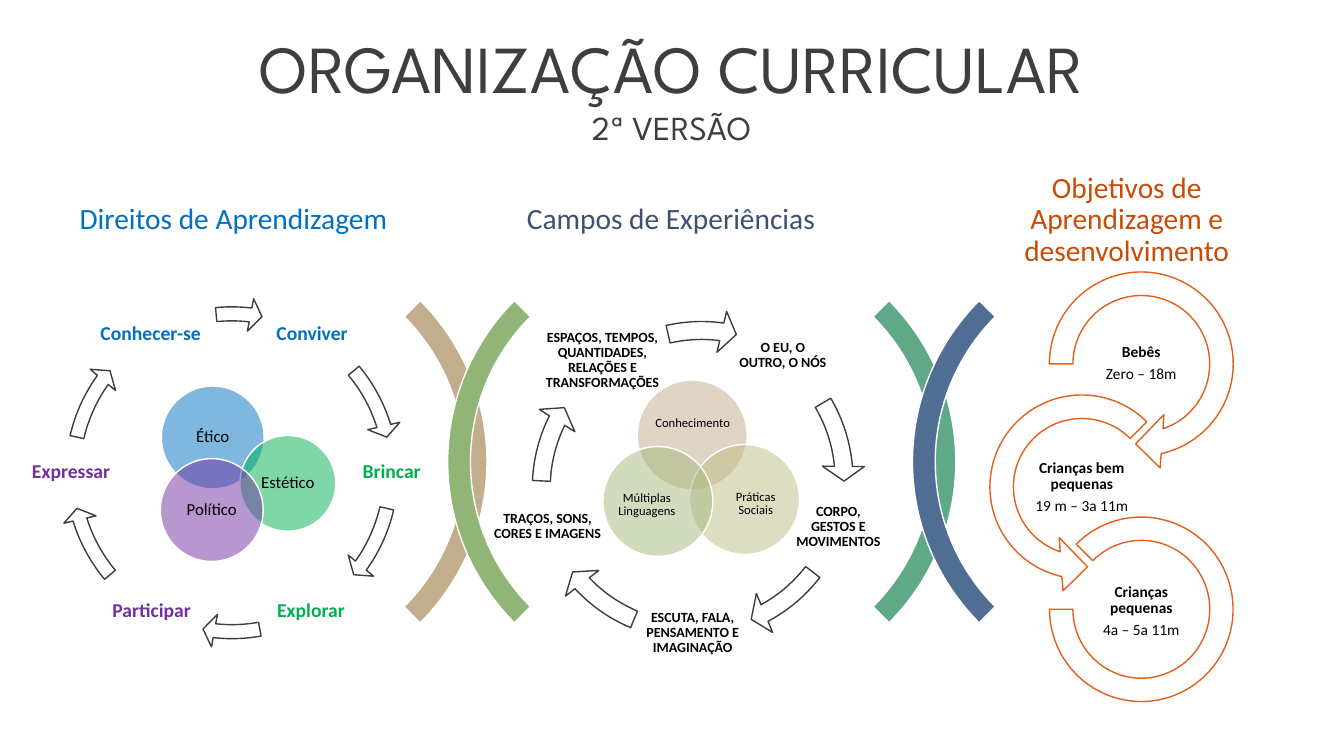
from dataclasses import dataclass

from lxml.etree import SubElement
from pptx import Presentation
from pptx.dml.color import RGBColor
from pptx.enum.shapes import MSO_SHAPE
from pptx.enum.text import MSO_ANCHOR, MSO_AUTO_SIZE, PP_ALIGN
from pptx.oxml.ns import qn
from pptx.util import Inches, Pt

Box = tuple[float, float, float, float]


@dataclass(frozen=True)
class Theme:
    title_font: str = "League Spartan"
    font: str = "Calibri"
    title_size: int = 48
    subtitle_size: int = 24
    heading_size: int = 21
    right_size: int = 14
    principle_size: int = 12
    stage_size: int = 11
    field_size: int = 10
    axis_size: int = 9
    title: str = "3C3E3F"
    black: str = "000000"
    white: str = "FFFFFF"
    outline: str = "3D3D3C"
    blue: str = "0070C0"
    green: str = "00B050"
    purple: str = "7030A0"
    navy: str = "3C526F"
    rust: str = "CA4B05"
    orange: str = "E26019"
    tan: str = "C2AD8D"
    leaf: str = "90B576"
    teal: str = "5FA989"
    steel: str = "506E94"
    olive: str = "BDBC84"
    sage: str = "A4B97C"


THEME = Theme()


@dataclass(frozen=True)
class Label:
    text: str
    box: Box
    size: int
    color: str = THEME.black
    bold: bool = False
    inset: float = 0


@dataclass(frozen=True)
class Circle:
    left: float
    top: float
    diameter: float
    color: str
    label: Label


@dataclass(frozen=True)
class Arc:
    """Thickness and head half-width are shares of the box; angles are degrees."""
    box: Box
    start: float
    end: float
    thickness: float
    fill: str = THEME.white
    line: str = THEME.outline
    rotation: int = 0
    head_angle: float = 0
    head_width: float = 0
    kind: MSO_SHAPE = MSO_SHAPE.CIRCULAR_ARROW


@dataclass(frozen=True)
class Stage:
    arc: Arc
    name: str
    ages: str
    left: float
    top: float


def bracket(left: float, rotation: int, color: str) -> Arc:
    return Arc((left, 2.32, 4.52, 4.52), 225, 315, 0.05, color, THEME.white,
               rotation, kind=MSO_SHAPE.BLOCK_ARC)


def heading(text: str, left: float, color: str) -> Label:
    return Label(text, (left, 1.73, 3.43, 0.91), THEME.heading_size, color, inset=0.09)


def principle(text: str, left: float, top: float, diameter: float, color: str) -> Circle:
    margin = 0.15
    side = diameter - 2 * margin
    label = Label(text, (left + margin, top + margin, side, side),
                  THEME.principle_size, inset=0.05)
    return Circle(left, top, diameter, color, label)


def axis(text: str, left: float, top: float, color: str, text_box: Box) -> Circle:
    return Circle(left, top, 1.09, color, Label(text, text_box, THEME.axis_size))


def right(text: str, left: float, top: float, width: float, color: str) -> Label:
    return Label(text, (left, top, width, 0.71), THEME.right_size, color, True, 0.02)


def right_arrow(start: float, end: float) -> Arc:
    return Arc((0.56, 2.95, 3.48, 3.48), start, end, 0.04, head_angle=4.17, head_width=0.047)


def field(text: str, left: float, top: float, width: float, height: float = 0.91) -> Label:
    return Label(text, (left, top, width, height), THEME.field_size, bold=True, inset=0.01)


def field_arrow(start: float, end: float, left: float = 5.16, top: float = 3.05) -> Arc:
    return Arc((left, top, 3.42, 3.42), start, end, 0.052, head_angle=5.59, head_width=0.061)


def stage_arrow(left: float, top: float, start: float, end: float, kind: MSO_SHAPE) -> Arc:
    return Arc((left, top, 2.12, 2.12), start, end, 0.11, line=THEME.orange,
               head_angle=19.04, head_width=0.125, kind=kind)


BRACKETS = [bracket(0.31, 90, THEME.tan), bracket(4.44, 270, THEME.leaf),
            bracket(4.96, 90, THEME.teal), bracket(9.05, 270, THEME.steel)]
HEADINGS = [heading("Direitos de Aprendizagem", 0.6, THEME.blue),
            heading("Campos de Experiências", 4.94, THEME.navy),
            heading("Objetivos de Aprendizagem e desenvolvimento", 9.46, THEME.rust)]
CIRCLES = [
    axis("Conhecimento", 6.32, 3.77, THEME.tan, (6.47, 3.96, 0.8, 0.49)),
    axis("Práticas Sociais", 6.84, 4.41, THEME.olive, (7.17, 4.7, 0.65, 0.6)),
    axis("Múltiplas Linguagens", 5.98, 4.43, THEME.sage, (6.09, 4.71, 0.65, 0.6)),
    principle("Ético", 1.6, 3.83, 1.02, THEME.blue),
    principle("Estético", 2.38, 4.32, 0.95, THEME.green),
    principle("Político", 1.59, 4.55, 1.02, THEME.purple),
]
CYCLES = [
    (right("Conviver", 2.6, 2.96, 0.99, THEME.blue), right_arrow(320.06, 342.88)),
    (right("Brincar", 3.46, 4.33, 0.85, THEME.green), right_arrow(12.95, 35.76)),
    (right("Explorar", 2.57, 5.71, 1.03, THEME.green), right_arrow(79.86, 96.29)),
    (right("Participar", 1, 5.71, 1.01, THEME.purple), right_arrow(140.06, 162.88)),
    (right("Expressar", 0.14, 4.33, 1.13, THEME.purple), right_arrow(192.95, 215.76)),
    (right("Conhecer-se", 0.86, 2.96, 1.27, THEME.blue), right_arrow(264.34, 276.74)),
    (field("O EU, O OUTRO, O NÓS", 7.31, 3.07, 0.91), field_arrow(329.42, 354.91)),
    (field("CORPO, GESTOS E MOVIMENTOS", 7.86, 4.77, 0.91), field_arrow(37.53, 61.66)),
    (field("ESCUTA, FALA, PENSAMENTO E IMAGINAÇÃO", 6.28, 5.73, 1.18, 1.1),
     field_arrow(112.75, 136.88)),
    (field("TRAÇOS, SONS, CORES E IMAGENS", 4.79, 4.77, 1.28),
     field_arrow(182.64, 206.41, top=3.13)),
    (field("ESPAÇOS, TEMPOS, QUANTIDADES, RELAÇÕES E TRANSFORMAÇÕES", 5.33, 3.12, 1.29),
     field_arrow(257.17, 277.61, 5.25, 3.07)),
]
STAGES = [
    Stage(stage_arrow(10.26, 2.55, 180, 75, MSO_SHAPE.CIRCULAR_ARROW),
          "Bebês", "Zero – 18m", 10.73, 3.31),
    Stage(stage_arrow(9.67, 3.77, 315, 105, MSO_SHAPE.LEFT_CIRCULAR_ARROW),
          "Crianças bem pequenas", "19 m – 3a 11m", 10.14, 4.54),
    Stage(Arc((10.41, 5.13, 1.82, 1.83), 225, 180, 0.127, line=THEME.orange,
              kind=MSO_SHAPE.BLOCK_ARC), "Crianças pequenas", "4a – 5a 11m", 10.73, 5.77),
]


def add_outline(page, kind: MSO_SHAPE, box: Box, fill: str, line: str):
    shape = page.shapes.add_shape(kind, *map(Inches, box))
    shape.shadow.inherit = False
    shape.fill.solid()
    shape.fill.fore_color.rgb = RGBColor.from_string(fill)
    shape.line.color.rgb = RGBColor.from_string(line)
    shape.line.width = Pt(1)
    return shape


def draw_arc(page, arc: Arc) -> None:
    shape = add_outline(page, arc.kind, arc.box, arc.fill, arc.line)
    shape.rotation = arc.rotation
    unit = 0.6  # adjustment units per degree
    if arc.kind == MSO_SHAPE.BLOCK_ARC:
        values = [arc.start * unit, arc.end * unit, arc.thickness]
    else:
        values = [arc.thickness, arc.head_angle * unit, arc.end * unit,
                  arc.start * unit, arc.head_width]
    for index, value in enumerate(values):
        shape.adjustments[index] = value


def style_paragraph(para, font: str, size: int, color: str, bold: bool = False) -> None:
    para.alignment = PP_ALIGN.CENTER
    para.font.name = font
    para.font.size = Pt(size)
    para.font.bold = bold
    para.font.color.rgb = RGBColor.from_string(color)


def draw_label(page, label: Label) -> None:
    """Write one paragraph per line of text; only the first may be bold."""
    frame = page.shapes.add_textbox(*map(Inches, label.box)).text_frame
    frame.word_wrap = True
    frame.vertical_anchor = MSO_ANCHOR.MIDDLE
    frame.margin_left = frame.margin_right = Inches(label.inset)
    frame.margin_top = frame.margin_bottom = Inches(label.inset)
    frame.text = label.text
    for index, para in enumerate(frame.paragraphs):
        style_paragraph(para, THEME.font, label.size, label.color, label.bold and index == 0)
        para.line_spacing = 0.9
        para.space_after = Pt(0.35 * label.size)


def draw_circle(page, circle: Circle) -> None:
    box = (circle.left, circle.top, circle.diameter, circle.diameter)
    shape = add_outline(page, MSO_SHAPE.OVAL, box, circle.color, THEME.white)
    color = shape._element.spPr.find(qn("a:solidFill"))[0]
    SubElement(color, qn("a:alpha"), val="50000")
    draw_label(page, circle.label)


def draw_title(page) -> None:
    title = page.shapes.title
    title.left, title.top, title.width, title.height = map(Inches, (0.29, 0.21, 12.74, 1.31))
    frame = title.text_frame
    frame.text = "ORGANIZAÇÃO CURRICULAR\n2ª VERSÃO"
    frame.word_wrap = True
    frame.auto_size = MSO_AUTO_SIZE.SHAPE_TO_FIT_TEXT
    frame.vertical_anchor = MSO_ANCHOR.TOP
    for para, size in zip(frame.paragraphs, (THEME.title_size, THEME.subtitle_size)):
        style_paragraph(para, THEME.title_font, size, THEME.title)


def main() -> None:
    deck = Presentation()
    deck.slide_width, deck.slide_height = Inches(13.33), Inches(7.5)
    page = deck.slides.add_slide(deck.slide_layouts[5])
    draw_title(page)
    for arc in BRACKETS:
        draw_arc(page, arc)
    for label in HEADINGS:
        draw_label(page, label)
    for circle in CIRCLES:
        draw_circle(page, circle)
    for label, arrow in CYCLES:
        draw_label(page, label)
        draw_arc(page, arrow)
    for stage in STAGES:
        draw_arc(page, stage.arc)
        draw_label(page, Label(f"{stage.name}\n{stage.ages}", (stage.left, stage.top, 1.18, 0.59),
                               THEME.stage_size, bold=True, inset=0.01))
    deck.save("out.pptx")


if __name__ == "__main__":
    main()
